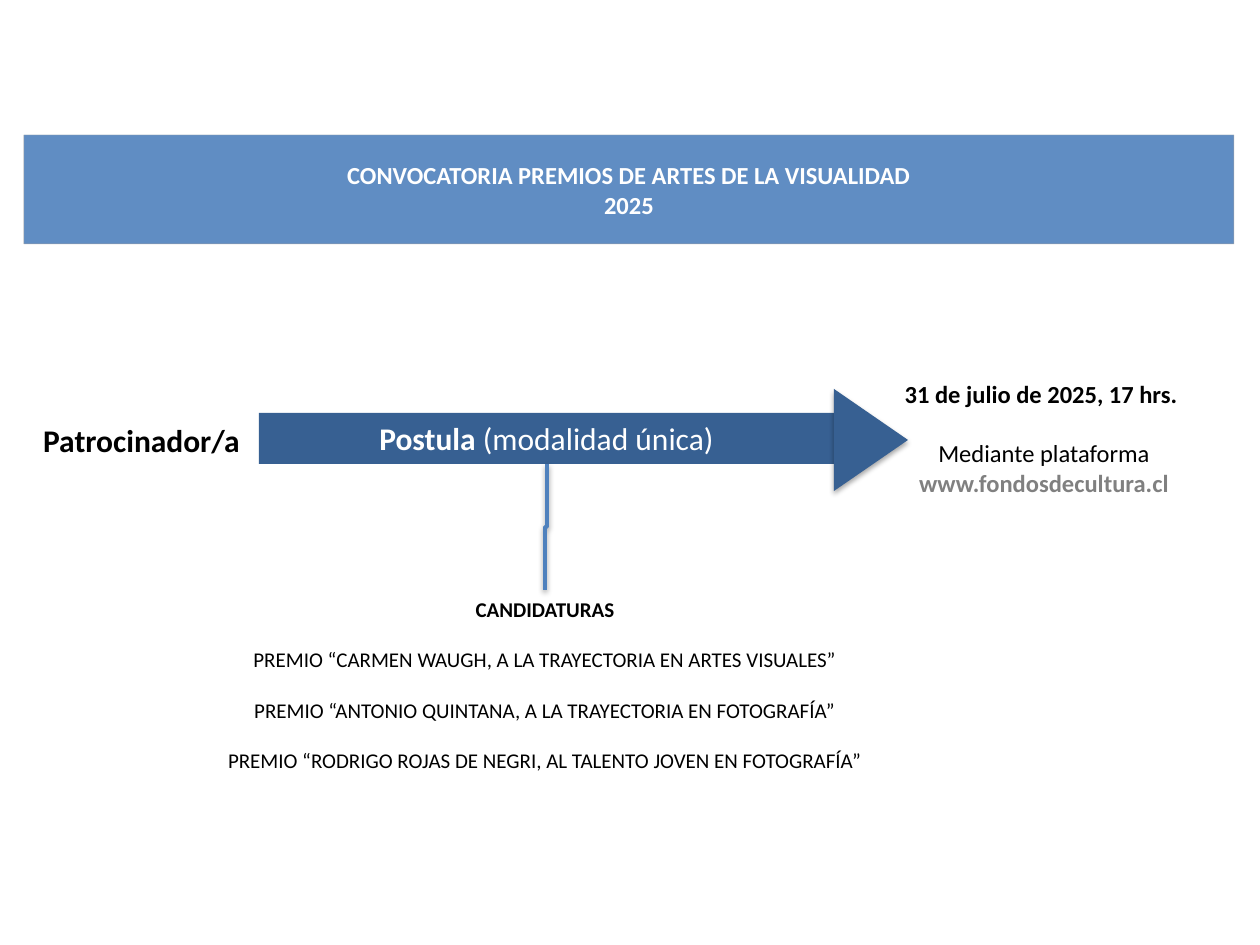
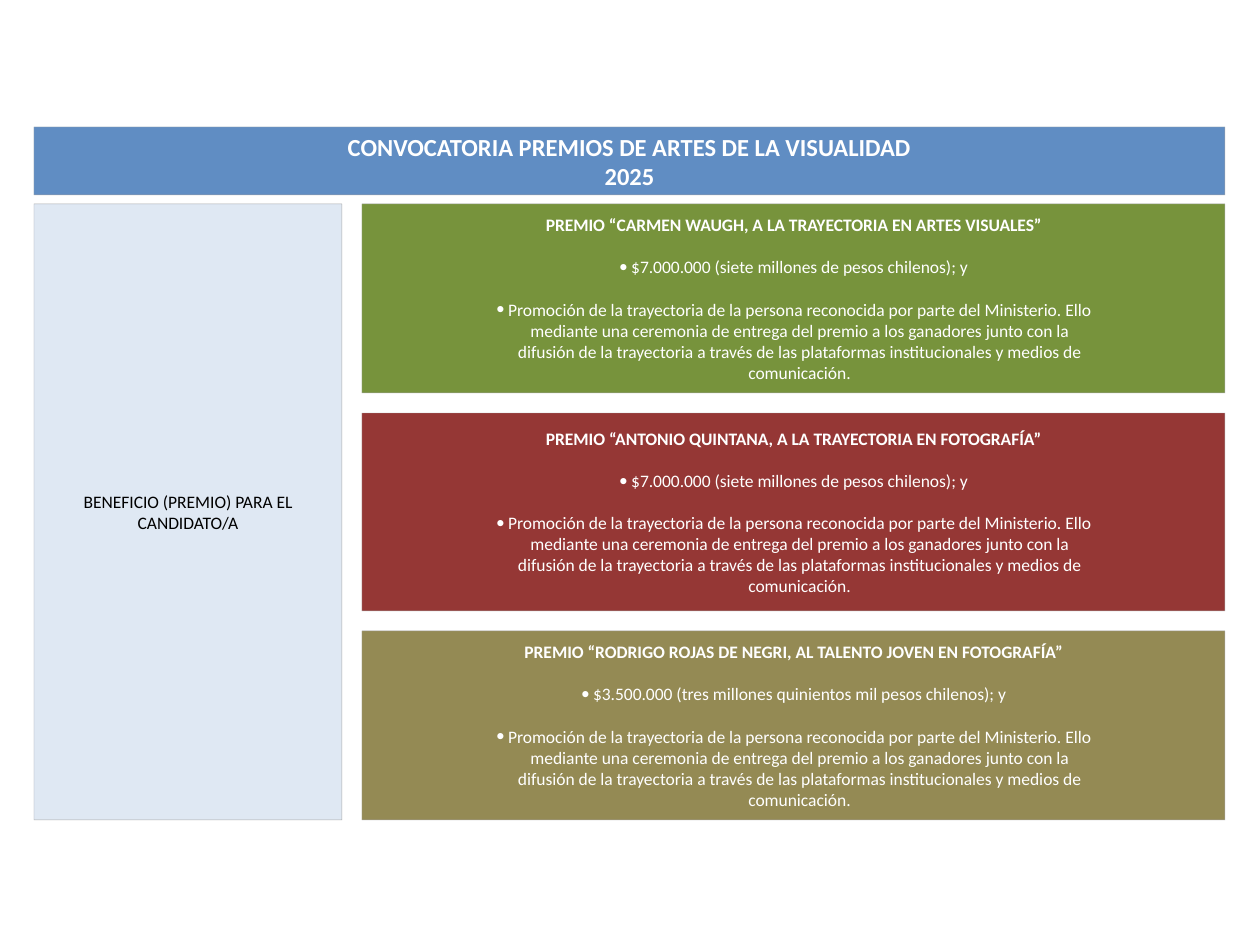
from dataclasses import dataclass
from typing import Optional

from lxml.etree import SubElement
from pptx import Presentation
from pptx.dml.color import RGBColor
from pptx.enum.shapes import MSO_CONNECTOR, MSO_SHAPE
from pptx.enum.text import MSO_ANCHOR, PP_ALIGN
from pptx.oxml.ns import qn
from pptx.util import Emu, Pt

PX_PER_INCH = 126
WHITE, BLACK, GREY = "FFFFFF", "000000", "808080"
BLUE, DARK_BLUE, PALE_BLUE = "4F81BD", "376092", "DCE6F2"
GREEN, RED, OLIVE, BORDER = "77933C", "953735", "948A54", "A6A6A6"
FONT_NAME = "Calibri"
LINE_HEIGHT = 1.21
BULLET_INDENT = 12
TITLE = ("CONVOCATORIA PREMIOS DE ARTES DE LA VISUALIDAD", "2025")
PROMOTION = "\v".join((
    "Promoción de la trayectoria de la persona reconocida por parte del Ministerio. Ello",
    "mediante una ceremonia de entrega del premio a los ganadores junto con la",
    "difusión de la trayectoria a través de las plataformas institucionales y medios de",
    "comunicación.",
))


@dataclass(frozen=True)
class Span:
    text: str
    bold: bool = False
    color: Optional[str] = None


@dataclass(frozen=True)
class Para:
    spans: tuple[Span, ...]
    line_above: bool = False
    bullet: bool = False


@dataclass(frozen=True)
class Area:
    left: int
    top: int
    width: int
    height: int


@dataclass(frozen=True)
class Prize:
    name: str
    amount: str
    color: str
    height: int


MILLIONS = "$7.000.000 (siete millones de pesos chilenos); y"
PRIZES = (
    Prize("PREMIO “CARMEN WAUGH, A LA TRAYECTORIA EN ARTES VISUALES”", MILLIONS, GREEN, 189),
    Prize("PREMIO “ANTONIO QUINTANA, A LA TRAYECTORIA EN FOTOGRAFÍA”", MILLIONS, RED, 198),
    Prize("PREMIO “RODRIGO ROJAS DE NEGRI, AL TALENTO JOVEN EN FOTOGRAFÍA”",
          "$3.500.000 (tres millones quinientos mil pesos chilenos); y", OLIVE, 189),
)


def px(length: int) -> Emu:
    return Emu(round(length * 914400 / PX_PER_INCH))


def rgb(color: str) -> RGBColor:
    return RGBColor.from_string(color)


def frame(area: Area) -> tuple[Emu, ...]:
    return tuple(px(n) for n in (area.left, area.top, area.width, area.height))


def line_of(text: str, bold: bool = False, **options: bool) -> Para:
    """Make a paragraph of a single span."""
    return Para((Span(text, bold),), **options)


def set_opacity(fill, percent: int) -> None:
    color = fill._xPr.find(qn("a:solidFill"))[0]
    SubElement(color, qn("a:alpha"), val=str(percent * 1000))


def add_shadow(shape, percent: int, distance: float) -> None:
    """Cast a soft black shadow straight down."""
    effects = SubElement(shape._element.spPr, qn("a:effectLst"))
    shadow = SubElement(effects, qn("a:outerShdw"), blurRad=str(Pt(3.1)),
                        dist=str(Pt(distance)), dir="5400000", rotWithShape="0")
    color = SubElement(shadow, qn("a:srgbClr"), val=BLACK)
    SubElement(color, qn("a:alpha"), val=str(percent * 1000))


def add_bullet(para) -> None:
    properties = para._p.get_or_add_pPr()
    indent = px(BULLET_INDENT)
    properties.set("marL", str(indent))
    properties.set("indent", str(-indent))
    SubElement(properties, qn("a:buFont"), typeface=FONT_NAME)
    SubElement(properties, qn("a:buChar"), char="•")


def write(shape, paras: list[Para], size: int, color: str, anchor: MSO_ANCHOR) -> None:
    text_frame = shape.text_frame
    text_frame.word_wrap = True
    text_frame.vertical_anchor = anchor
    for index, content in enumerate(paras):
        para = text_frame.paragraphs[0] if index == 0 else text_frame.add_paragraph()
        para.alignment = PP_ALIGN.CENTER
        if content.line_above:
            para.space_before = Pt(round(size * LINE_HEIGHT, 1))
        if content.bullet:
            add_bullet(para)
        for span in content.spans:
            for index_of_line, text in enumerate(span.text.split("\v")):
                if index_of_line:
                    para.add_line_break()
                run = para.add_run()
                run.text = text
                formats = {"name": FONT_NAME, "size": Pt(size), "bold": span.bold}
                for key, value in formats.items():
                    setattr(run.font, key, value)
                run.font.color.rgb = rgb(span.color or color)


def add_label(page, area: Area, paras: list[Para], size: int) -> None:
    box = page.shapes.add_textbox(*frame(area))
    write(box, paras, size, BLACK, MSO_ANCHOR.TOP)


def add_filled(page, kind: MSO_SHAPE, area: Area, color: str):
    shape = page.shapes.add_shape(kind, *frame(area))
    shape.fill.solid()
    shape.fill.fore_color.rgb = rgb(color)
    shape.line.fill.background()
    return shape


def add_panel(page, area: Area, color: str, paras: list[Para], size: int,
              text_color: str = WHITE, opacity: int = 100) -> None:
    """Draw a thinly bordered rectangle with centred text."""
    panel = add_filled(page, MSO_SHAPE.RECTANGLE, area, color)
    if opacity < 100:
        set_opacity(panel.fill, opacity)
    panel.line.color.rgb = rgb(BORDER)
    panel.line.width = Pt(0.25)
    set_opacity(panel.line.fill, 90)
    panel.shadow.inherit = False
    write(panel, paras, size, text_color, MSO_ANCHOR.MIDDLE)


def add_title_band(page, area: Area) -> None:
    add_panel(page, area, BLUE, [line_of(text, True) for text in TITLE], 14, opacity=90)


def add_branch(page, area: Area) -> None:
    """Draw an elbow line turned a quarter so that it runs downwards."""
    branch = page.shapes.add_connector(
        MSO_CONNECTOR.ELBOW, px(area.left), px(area.top),
        px(area.left + area.width), px(area.top + area.height))
    branch._element.spPr.find(qn("a:xfrm")).set("rot", "5400000")
    branch.line.color.rgb = rgb(BLUE)
    branch.line.width = Pt(2)
    add_shadow(branch, 38, 1.6)


def build_application_page(page) -> None:
    add_title_band(page, Area(24, 135, 1210, 109))
    add_label(page, Area(24, 415, 235, 51), [line_of("Patrocinador/a", True)], 18)

    shaft = add_filled(page, MSO_SHAPE.RECTANGLE, Area(259, 413, 575, 51), DARK_BLUE)
    shaft.shadow.inherit = False
    step = Para((Span("Postula ", True), Span("(modalidad única)")))
    write(shaft, [step], 18, WHITE, MSO_ANCHOR.TOP)
    head = add_filled(page, MSO_SHAPE.ISOSCELES_TRIANGLE, Area(820, 403, 102, 74), DARK_BLUE)
    head.rotation = 90
    add_shadow(head, 35, 1.8)

    platform = Para((Span("Mediante plataforma "),
                     Span("www.fondosdecultura.cl", True, GREY)), line_above=True)
    deadline = line_of("31 de julio de 2025, 17 hrs. ", True)
    add_label(page, Area(853, 373, 382, 131), [deadline, platform], 14)

    candidates = [line_of("CANDIDATURAS", True)]
    candidates += [line_of(prize.name, line_above=True) for prize in PRIZES]
    add_label(page, Area(203, 590, 684, 190), candidates, 12)
    add_branch(page, Area(483, 526, 126, 2))


def build_benefits_page(page) -> None:
    left, top, gap = 34, 204, 20
    card_left, card_width = 362, 863
    total = sum(prize.height for prize in PRIZES) + gap * (len(PRIZES) - 1)
    add_panel(page, Area(left, top, 308, total), PALE_BLUE,
              [line_of("BENEFICIO (PREMIO) PARA EL CANDIDATO/A")], 10, BLACK, 90)
    add_title_band(page, Area(left, 127, card_left + card_width - left, 68))
    for prize in PRIZES:
        paras = [line_of(prize.name, True)]
        paras += [line_of(text, line_above=True, bullet=True)
                  for text in (prize.amount, PROMOTION)]
        add_panel(page, Area(card_left, top, card_width, prize.height),
                  prize.color, paras, 10)
        top += prize.height + gap


def main() -> None:
    deck = Presentation()
    deck.slide_width, deck.slide_height = px(1260), px(945)
    for build in (build_application_page, build_benefits_page):
        build(deck.slides.add_slide(deck.slide_layouts[6]))
    deck.save("out.pptx")


if __name__ == "__main__":
    main()
